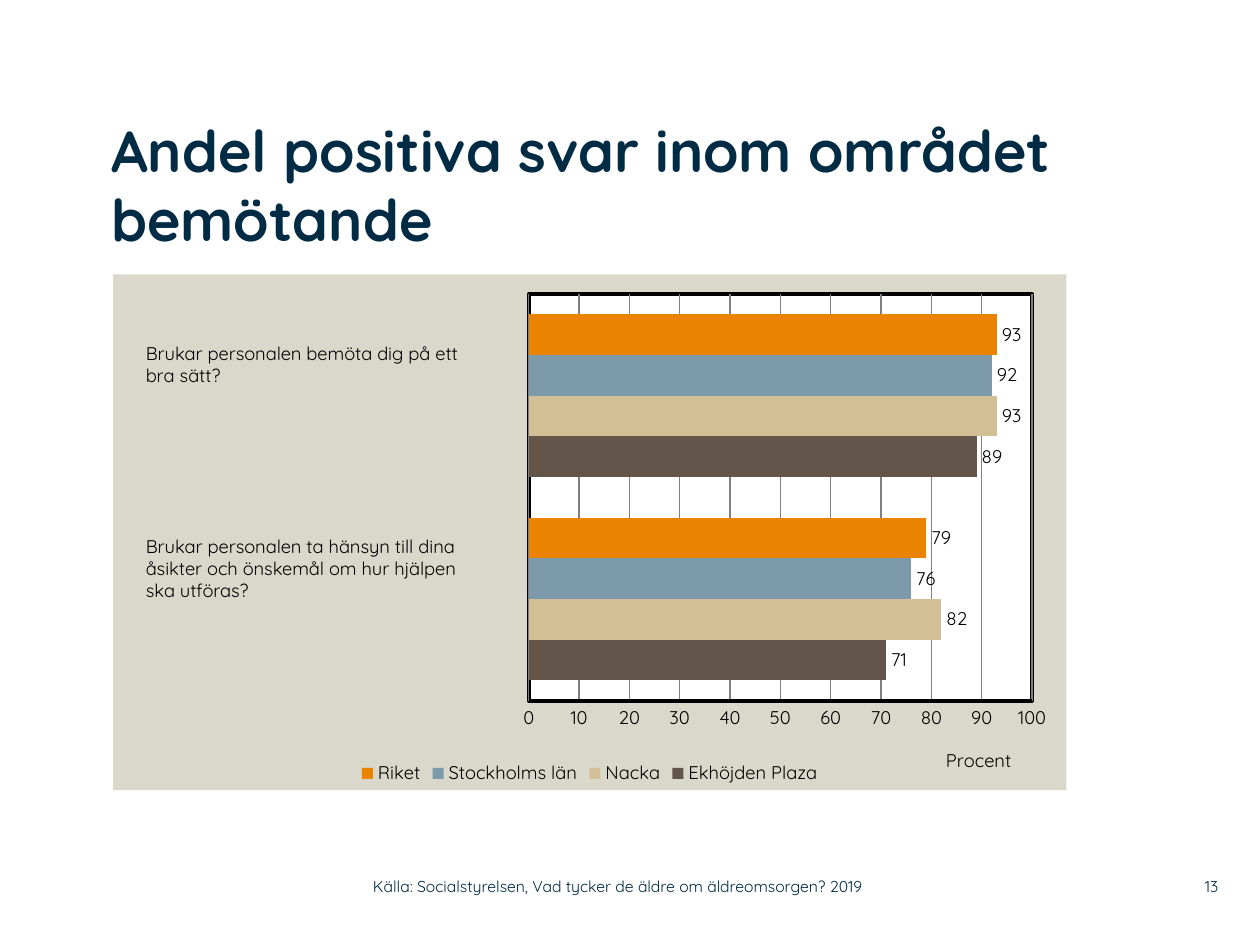
import pptx
import pptx.chart.data
import pptx.dml.color
import pptx.enum.chart
import pptx.enum.text
import pptx.oxml
import pptx.oxml.ns
import pptx.util
from pptx.util import Cm

RGBColor = pptx.dml.color.RGBColor
NAVY = RGBColor(0x00, 0x2B, 0x45)
BLACK = RGBColor(0x00, 0x00, 0x00)
WHITE = RGBColor(0xFF, 0xFF, 0xFF)
PANEL = RGBColor(0xDA, 0xD7, 0xCB)
GRID = RGBColor(0x80, 0x80, 0x80)
FONT = "Quicksand"
ANCHOR = pptx.enum.text.MSO_ANCHOR
ALIGN = pptx.enum.text.PP_ALIGN

RESULTS = [
    ("Ekhöjden Plaza", (71, 89), RGBColor(0x63, 0x55, 0x49)),
    ("Nacka", (82, 93), RGBColor(0xD3, 0xBF, 0x96)),
    ("Stockholms län", (76, 92), RGBColor(0x7D, 0x9A, 0xAA)),
    ("Riket", (79, 93), RGBColor(0xE9, 0x83, 0x00)),
]
QUESTIONS = [
    (6.78, 1.14, ["Brukar personalen bemöta dig på ett", "bra sätt?"]),
    (10.67, 1.6, ["Brukar personalen ta hänsyn till dina",
                  "åsikter och önskemål om hur hjälpen", "ska utföras?"]),
]


def set_attributes(target, values):
    for name, value in values.items():
        setattr(target, name, value)


def format_font(font, size, color, bold=False):
    set_attributes(font, {"name": FONT, "size": pptx.util.Pt(size), "bold": bold})
    font.color.rgb = color


def fill_text(frame, lines, size, color, bold=False, align=ALIGN.LEFT):
    for index, line in enumerate(lines):
        paragraph = frame.paragraphs[0] if index == 0 else frame.add_paragraph()
        paragraph.alignment = align
        run = paragraph.add_run()
        run.text = line
        format_font(run.font, size, color, bold)


def remove_margins(frame):
    sides = ("left", "top", "right", "bottom")
    set_attributes(frame, {f"margin_{side}": 0 for side in sides})


def add_title(slide, text):
    title = slide.shapes.title
    set_attributes(title, {"left": Cm(2.24), "top": Cm(1.9),
                           "width": Cm(19.3), "height": Cm(3.61)})
    frame = title.text_frame
    set_attributes(frame, {"word_wrap": True, "vertical_anchor": ANCHOR.MIDDLE,
                           "auto_size": pptx.enum.text.MSO_AUTO_SIZE.NONE})
    remove_margins(frame)
    fill_text(frame, [text], 33, NAVY, bold=True)


def add_question(slide, top, height, lines):
    question = slide.shapes.add_textbox(Cm(2.69), Cm(top), Cm(7.6), Cm(height))
    question.text_frame.word_wrap = True
    fill_text(question.text_frame, lines, 10.5, BLACK)


def add_footer(slide, left, width, text, align):
    footer = slide.shapes.add_textbox(Cm(left), Cm(17.5), Cm(width), Cm(0.74))
    frame = footer.text_frame
    set_attributes(frame, {"word_wrap": True, "vertical_anchor": ANCHOR.MIDDLE})
    remove_margins(frame)
    fill_text(frame, [text], 9, NAVY, align=align)


def set_layout(part, x, y, size=None, inner=False):
    for layout in part.findall(pptx.oxml.ns.qn("c:layout")):
        part.remove(layout)
    values = {"layoutTarget": "inner"} if inner else {}
    values.update(xMode="edge", yMode="edge", x=x, y=y)
    if size:
        values.update(w=size[0], h=size[1])
    body = "".join(f'<c:{tag} val="{value}"/>' for tag, value in values.items())
    layout = pptx.oxml.parse_xml(
        f'<c:layout {pptx.oxml.ns.nsdecls("c")}><c:manualLayout>{body}'
        '</c:manualLayout></c:layout>')
    before = part.find(pptx.oxml.ns.qn("c:overlay"))
    if before is None:
        part.insert(0, layout)
    else:
        before.addprevious(layout)


def area_format(color, border):
    return pptx.oxml.parse_xml(
        f'<c:spPr {pptx.oxml.ns.nsdecls("c", "a")}><a:solidFill>'
        f'<a:srgbClr val="{color}"/></a:solidFill>{border}</c:spPr>')


def format_areas(chart):
    plot_area = chart._chartSpace.chart.plotArea
    set_layout(plot_area, 0.436, 0.038, (0.528, 0.789), inner=True)
    border = ('<a:ln w="25400"><a:solidFill><a:srgbClr val="000000"/>'
              '</a:solidFill></a:ln>')
    plot_area.append(area_format(WHITE, border))
    chart._chartSpace.chart.addnext(
        area_format(PANEL, "<a:ln><a:noFill/></a:ln>"))


def format_axes(chart):
    chart.category_axis.visible = False
    axis = chart.value_axis
    none = pptx.enum.chart.XL_TICK_MARK.NONE
    set_attributes(axis, {"minimum_scale": 0, "maximum_scale": 100,
                          "major_unit": 10, "has_major_gridlines": True,
                          "major_tick_mark": none, "minor_tick_mark": none})
    for line, color, width in ((axis.format.line, BLACK, 2),
                               (axis.major_gridlines.format.line, GRID, 0.75)):
        line.color.rgb = color
        line.width = pptx.util.Pt(width)
    format_font(axis.tick_labels.font, 10.5, BLACK)
    fill_text(axis.axis_title.text_frame, ["Procent"], 10.5, BLACK)
    set_layout(axis.axis_title._element, 0.87, 0.91)


def format_series(plot):
    set_attributes(plot, {"gap_width": 100, "overlap": 0,
                          "vary_by_categories": False})
    for series, (_, _, color) in zip(plot.series, RESULTS):
        series.format.fill.solid()
        series.format.fill.fore_color.rgb = color
        labels = series.data_labels
        position = pptx.enum.chart.XL_LABEL_POSITION.OUTSIDE_END
        set_attributes(labels, {"show_value": True, "position": position})
        format_font(labels.font, 10.5, BLACK)


def add_results_chart(slide):
    data = pptx.chart.data.CategoryChartData()
    data.categories = ["1", "2"]
    for name, values, _ in RESULTS:
        data.add_series(name, values)
    chart = slide.shapes.add_chart(
        pptx.enum.chart.XL_CHART_TYPE.BAR_CLUSTERED,
        Cm(2.28), Cm(5.53), Cm(19.22), Cm(10.4), data).chart
    set_attributes(chart, {"has_title": False, "has_legend": True})
    format_font(chart.font, 10.5, BLACK)
    set_attributes(chart.legend, {
        "position": pptx.enum.chart.XL_LEGEND_POSITION.BOTTOM,
        "include_in_layout": False})
    format_font(chart.legend.font, 10.5, BLACK)
    format_axes(chart)
    format_series(chart.plots[0])
    format_areas(chart)


def main():
    presentation = pptx.Presentation()
    set_attributes(presentation, {"slide_width": Cm(25.4),
                                  "slide_height": Cm(19.05)})
    slide = presentation.slides.add_slide(presentation.slide_layouts[5])
    add_results_chart(slide)
    add_title(slide, "Andel positiva svar inom området bemötande")
    for top, height, lines in QUESTIONS:
        add_question(slide, top, height, lines)
    add_footer(slide, 23.37, 1.19, "13", ALIGN.RIGHT)
    add_footer(slide, 7.52, 11.25, "Källa: Socialstyrelsen, Vad tycker de äldre "
               "om äldreomsorgen? 2019", ALIGN.LEFT)
    presentation.save("out.pptx")


if __name__ == "__main__":
    main()
